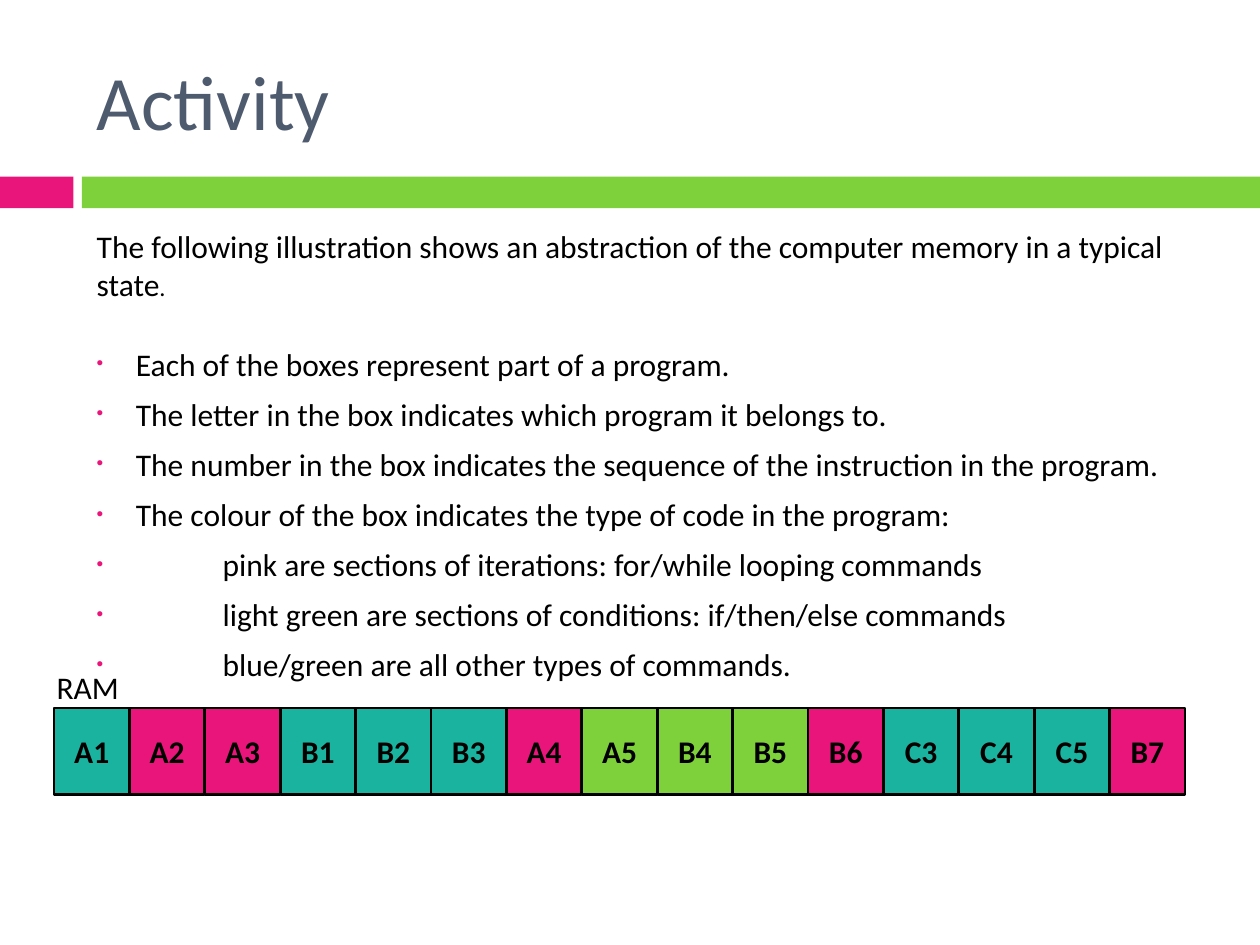
"""Build the Activity slide about programs held in computer memory."""
from lxml import etree
from pptx import Presentation
from pptx.dml.color import RGBColor
from pptx.enum.shapes import MSO_SHAPE
from pptx.enum.text import MSO_ANCHOR, PP_ALIGN
from pptx.oxml.ns import qn
from pptx.util import Cm, Pt

RECTANGLE = MSO_SHAPE.RECTANGLE
MIDDLE = MSO_ANCHOR.MIDDLE
TOP = MSO_ANCHOR.TOP
LEFT = PP_ALIGN.LEFT
CENTER = PP_ALIGN.CENTER

PINK = RGBColor(0xEA, 0x15, 0x7A)
GREEN = RGBColor(0x7F, 0xD1, 0x3B)
TEAL = RGBColor(0x1A, 0xB3, 0x9F)
SLATE = RGBColor(0x4E, 0x5B, 0x6F)
BLACK = RGBColor(0, 0, 0)

INTRO = "The following illustration shows an abstraction of the computer memory in a typical state"
BULLET_INDENT = Cm(0.79)
DEEP_INDENT = Cm(2.54)
BULLETS = [
    ("Each of the boxes represent part of a program.", BULLET_INDENT),
    ("The letter in the box indicates which program it belongs to.", BULLET_INDENT),
    ("The number in the box indicates the sequence of the instruction in the program.", BULLET_INDENT),
    ("The colour of the box indicates the type of code in the program:", BULLET_INDENT),
    ("pink are sections of iterations: for/while looping commands", DEEP_INDENT),
    ("light green are sections of conditions: if/then/else commands", DEEP_INDENT),
    ("blue/green are all other types of commands.", DEEP_INDENT),
]
MEMORY = [
    ("A1", TEAL), ("A2", PINK), ("A3", PINK), ("B1", TEAL), ("B2", TEAL),
    ("B3", TEAL), ("A4", PINK), ("A5", GREEN), ("B4", GREEN), ("B5", GREEN),
    ("B6", PINK), ("C3", TEAL), ("C4", TEAL), ("C5", TEAL), ("B7", PINK),
]
CELL_WIDTH = Cm(1.52)


def style_runs(para, size=18, color=BLACK, bold=False):
    for span in para.runs:
        span.font.name = "Calibri"
        span.font.size = Pt(size)
        span.font.color.rgb = color
        span.font.bold = bold


def add_bullet(para, indent):
    properties = para._p.get_or_add_pPr()
    properties.set("marL", str(indent))
    properties.set("indent", str(-indent))
    color = etree.SubElement(properties, qn("a:buClr"))
    etree.SubElement(color, qn("a:srgbClr"), val=str(PINK))
    etree.SubElement(properties, qn("a:buSzPct"), val="60000")
    etree.SubElement(properties, qn("a:buFont"), typeface="Arial")
    etree.SubElement(properties, qn("a:buChar"), char="•")


deck = Presentation()
deck.slide_width = Cm(25.4)
deck.slide_height = Cm(19.05)
page = deck.slides.add_slide(deck.slide_layouts[5])

for left, width, color in [(0, 1.48, PINK), (1.65, 23.75, GREEN)]:
    band = page.shapes.add_shape(RECTANGLE, Cm(left), Cm(3.56), Cm(width), Cm(0.64))
    band.shadow.inherit = False
    band.fill.solid()
    band.fill.fore_color.rgb = color
    band.line.fill.background()

title = page.shapes.title
title.left, title.top, title.width, title.height = Cm(1.7), Cm(0.64), Cm(22.66), Cm(2.74)
title.text_frame.text = "Activity"
title.text_frame.vertical_anchor = MIDDLE
title.text_frame.paragraphs[0].alignment = LEFT
style_runs(title.text_frame.paragraphs[0], size=44, color=SLATE)

body = page.shapes.add_textbox(Cm(1.7), Cm(4.45), Cm(22.66), Cm(9.4)).text_frame
body.word_wrap = True
body.vertical_anchor = TOP
body.text = INTRO
intro = body.paragraphs[0]
intro.add_run().text = "."
style_runs(intro)
intro.runs[-1].font.size = Pt(14)

for number, (text, indent) in enumerate(BULLETS):
    para = body.add_paragraph()
    para.text = text
    para.space_before = Pt(7 if number else 24)
    add_bullet(para, indent)
    style_runs(para)

memory = page.shapes.add_group_shape()
label = memory.shapes.add_textbox(Cm(0.89), Cm(13.34), Cm(1.9), Cm(1.02)).text_frame
label.word_wrap = False
label.text = "RAM"
style_runs(label.paragraphs[0])

for column, (name, color) in enumerate(MEMORY):
    cell = memory.shapes.add_shape(
        RECTANGLE, Cm(1.09) + column * CELL_WIDTH, Cm(14.27), CELL_WIDTH, Cm(1.75)
    )
    cell.shadow.inherit = False
    cell.fill.solid()
    cell.fill.fore_color.rgb = color
    cell.line.color.rgb = BLACK
    cell.line.width = Pt(1.5)
    cell.text_frame.text = name
    cell.text_frame.word_wrap = False
    cell.text_frame.vertical_anchor = MIDDLE
    cell.text_frame.paragraphs[0].alignment = CENTER
    style_runs(cell.text_frame.paragraphs[0], bold=True)

deck.save("out.pptx")
